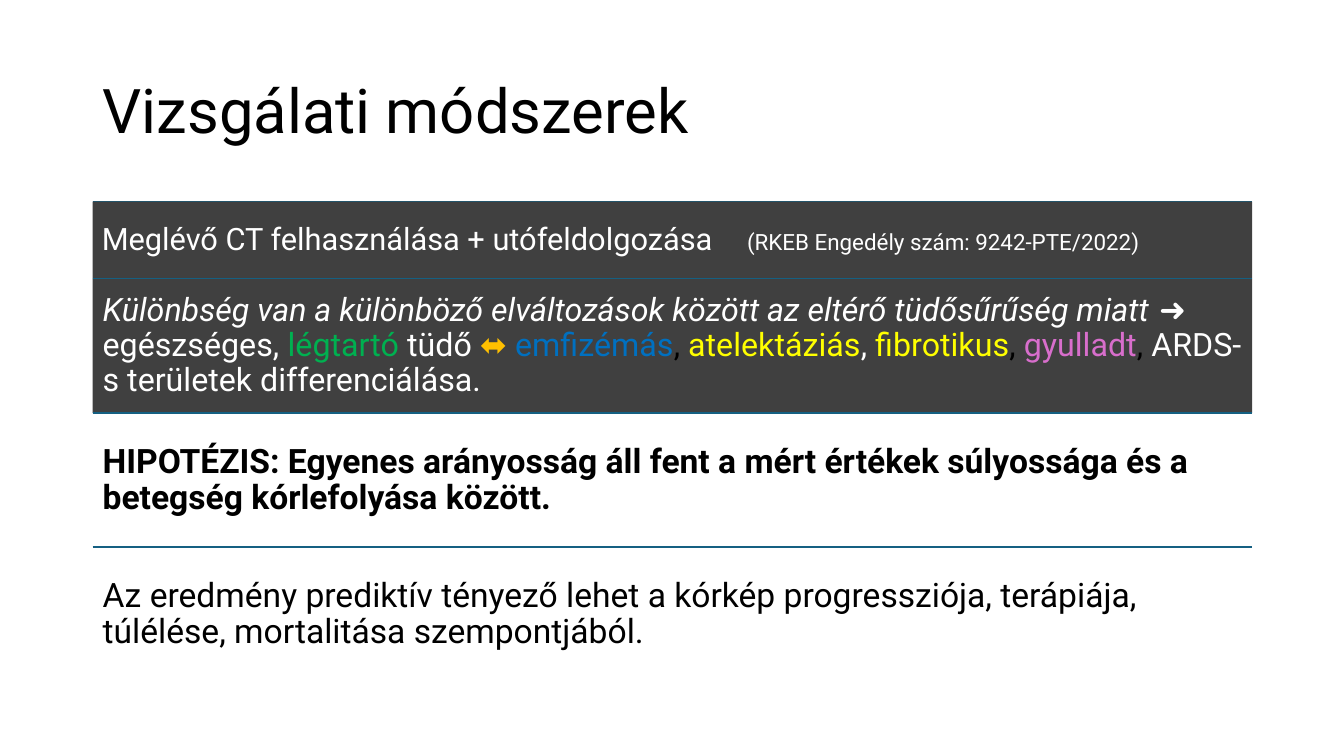
from lxml import etree
from pptx import Presentation
from pptx.dml.color import RGBColor
from pptx.enum.shapes import MSO_CONNECTOR, MSO_SHAPE
from pptx.enum.text import MSO_ANCHOR, PP_ALIGN
from pptx.oxml.ns import qn
from pptx.util import Inches, Pt

RECT = MSO_SHAPE.RECTANGLE
LINE = MSO_CONNECTOR.STRAIGHT
MIDDLE = MSO_ANCHOR.MIDDLE
LEFT = PP_ALIGN.LEFT

FONT = "Roboto"
BLACK, WHITE, DARK, RULE = "000000", "FFFFFF", "404040", "156082"
GREEN, BLUE, GOLD, YELLOW, PINK = "00B050", "0070C0", "FFC000", "FFFF00", "D86ECC"

WIDE, HIGH = 13.33, 7.5
SIDE, SPAN = 0.92, 11.5
TAB = 6.4

ROWS = [
    (0.77, DARK, 0.09, [
        ("Meglévő CT felhasználása + utófeldolgozása \t", 22, WHITE, ""),
        ("(RKEB Engedély szám: 9242-PTE/2022)", 16, WHITE, ""),
    ]),
    (1.33, DARK, 0.1, [
        ("Különbség van a különböző elváltozások között az eltérő tüdősűrűség miatt ",
         23, WHITE, "i"),
        ("➜ egészséges, ", 23, WHITE, ""),
        ("légtartó", 23, GREEN, ""),
        (" tüdő ", 23, WHITE, ""),
        ("⬌ ", 23, GOLD, ""),
        ("emfizémás", 23, BLUE, ""),
        (", ", 23, BLACK, ""),
        ("atelektáziás", 23, YELLOW, ""),
        (", ", 23, WHITE, ""),
        ("fibrotikus", 23, YELLOW, ""),
        (", ", 23, BLACK, ""),
        ("gyulladt", 23, PINK, ""),
        (", ", 23, BLACK, ""),
        ("ARDS-s területek differenciálása.", 23, WHITE, ""),
    ]),
    (1.33, None, 0.1, [
        ("HIPOTÉZIS: Egyenes arányosság áll fent a mért értékek súlyossága "
         "és a betegség kórlefolyása között.", 24, BLACK, "b"),
    ]),
    (1.33, None, 0.1, [
        ("Az eredmény prediktív tényező lehet a kórkép progressziója, terápiája, "
         "túlélése, mortalitása szempontjából.", 24, BLACK, ""),
    ]),
]


def paint(part, color):
    part.solid()
    part.fore_color.rgb = RGBColor.from_string(color)


def write(shape, runs, pad):
    frame = shape.text_frame
    frame.word_wrap = True
    frame.vertical_anchor = MIDDLE
    frame.margin_left = frame.margin_right = Inches(pad)
    frame.margin_top = frame.margin_bottom = Inches(pad)
    para = frame.paragraphs[0]
    para.alignment = LEFT
    para.line_spacing = 0.9
    if any("\t" in run[0] for run in runs):
        stops = etree.SubElement(para._p.get_or_add_pPr(), qn("a:tabLst"))
        etree.SubElement(stops, qn("a:tab"), pos=str(Inches(TAB)), algn="l")
    for text, size, color, style in runs:
        run = para.add_run()
        run.text = text
        font = run.font
        font.name = FONT
        font.size = Pt(size)
        font.bold = style == "b"
        font.italic = style == "i"
        paint(font.fill, color)


def add_title(slide, left, top, width, height):
    box = slide.shapes.add_textbox(*map(Inches, (left, top, width, height)))
    write(box, [("Vizsgálati módszerek", 44, BLACK, "")], 0.1)


def add_rule(slide, left, top, width):
    rule = slide.shapes.add_connector(
        LINE, *map(Inches, (left, top, left + width, top)))
    paint(rule.line.fill, RULE)
    rule.line.width = Pt(1.5)
    etree.SubElement(rule._element.spPr, qn("a:effectLst"))


def add_row(slide, left, top, width, height, fill, pad, runs):
    add_rule(slide, left, top, width)
    place = map(Inches, (left, top, width, height))
    if fill:
        box = slide.shapes.add_shape(RECT, *place)
        box.shadow.inherit = False
        paint(box.fill, fill)
        box.line.fill.background()
    else:
        box = slide.shapes.add_textbox(*place)
    write(box, runs, pad)


def add_rows(slide, left, top, width):
    for height, fill, pad, runs in ROWS:
        add_row(slide, left, top, width, height, fill, pad, runs)
        top += height


def main():
    deck = Presentation()
    deck.slide_width, deck.slide_height = Inches(WIDE), Inches(HIGH)
    slide = deck.slides.add_slide(deck.slide_layouts[6])
    add_title(slide, SIDE, 0.4, SPAN, 1.45)
    add_rows(slide, SIDE, 2, SPAN)
    deck.save("out.pptx")


if __name__ == "__main__":
    main()
